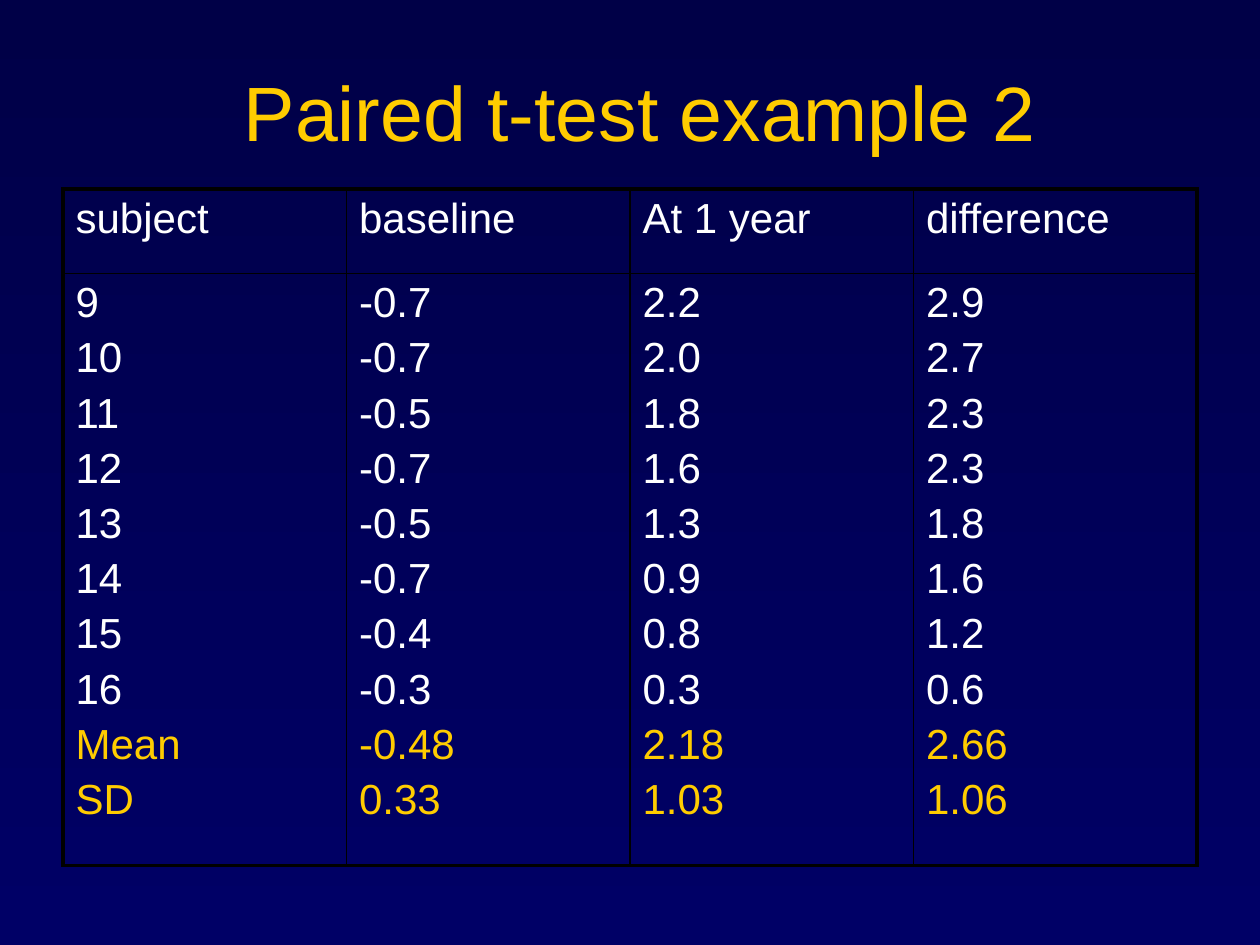
from lxml.etree import SubElement
from pptx import Presentation
from pptx.dml.color import RGBColor
from pptx.enum.text import MSO_ANCHOR, PP_ALIGN
from pptx.oxml.ns import qn
from pptx.util import Inches, Pt

COLORS = {"top": "000047", "base": "000066", "gold": "FFCC00",
          "white": "FFFFFF", "rule": "000000"}
FONT = "Arial"
HEADS = ["subject", "baseline", "At 1 year", "difference"]
DATA = [
    ["9", "-0.7", "2.2", "2.9"],
    ["10", "-0.7", "2.0", "2.7"],
    ["11", "-0.5", "1.8", "2.3"],
    ["12", "-0.7", "1.6", "2.3"],
    ["13", "-0.5", "1.3", "1.8"],
    ["14", "-0.7", "0.9", "1.6"],
    ["15", "-0.4", "0.8", "1.2"],
    ["16", "-0.3", "0.3", "0.6"],
]
STATS = [
    ["Mean", "-0.48", "2.18", "2.66"],
    ["SD", "0.33", "1.03", "1.06"],
]


def color(name):
    return RGBColor.from_string(COLORS[name])


def style(para, size, name):
    for run in para.runs:
        run.font.size = Pt(size)
        run.font.name = FONT
        run.font.color.rgb = color(name)


def add_ground(slide):
    fill = slide.background.fill
    fill.gradient()
    fill.gradient_angle = 270
    for stop, name, pos in zip(fill.gradient_stops, ("top", "base"), (0, 1)):
        stop.color.rgb = color(name)
        stop.position = pos


def add_title(slide, left, top, width, height):
    box = slide.shapes.add_textbox(left, top, width, height)
    frame = box.text_frame
    frame.word_wrap = True
    frame.vertical_anchor = MSO_ANCHOR.MIDDLE
    frame.text = "Paired t-test example 2"
    para = frame.paragraphs[0]
    para.alignment = PP_ALIGN.CENTER
    style(para, 44, "gold")


def add_rules(cell, outer):
    """Rule all four sides, heavier on the outer edges of the table."""
    props = cell._tc.get_or_add_tcPr()
    for side in "LRTB":
        width = Pt(2.25 if side in outer else 1)
        line = SubElement(props, qn(f"a:ln{side}"), w=str(width))
        fill = SubElement(line, qn("a:solidFill"))
        SubElement(fill, qn("a:srgbClr"), val=COLORS["rule"])


def fill_cell(cell, lines, outer):
    add_rules(cell, outer)
    cell.fill.background()
    cell.text_frame.text = "\n".join(text for text, _ in lines)
    for i, para in enumerate(cell.text_frame.paragraphs):
        if i:
            para.space_before = Pt(4.8)
        style(para, 24, lines[i][1])


def add_grid(slide, left, top, width, heights):
    count = len(HEADS)
    frame = slide.shapes.add_table(2, count, left, top, width, sum(heights))
    table = frame.table
    table.first_row = table.horz_banding = False
    for row, height in zip(table.rows, heights):
        row.height = height
    for c, head in enumerate(HEADS):
        table.columns[c].width = width // count
        edge = {0: "L", count - 1: "R"}.get(c, "")
        body = [(row[c], "white") for row in DATA]
        body += [(row[c], "gold") for row in STATS]
        fill_cell(table.cell(0, c), [(head, "white")], edge + "T")
        fill_cell(table.cell(1, c), body, edge + "B")


def main():
    deck = Presentation()
    deck.slide_width, deck.slide_height = Inches(10), Inches(7.5)
    slide = deck.slides.add_slide(deck.slide_layouts[6])
    add_ground(slide)
    add_title(slide, Inches(0.58), Inches(0.25), Inches(9), Inches(1.25))
    add_grid(slide, Inches(0.5), Inches(1.5), Inches(9),
             [Inches(0.67), Inches(4.58)])
    deck.save("out.pptx")


if __name__ == "__main__":
    main()
